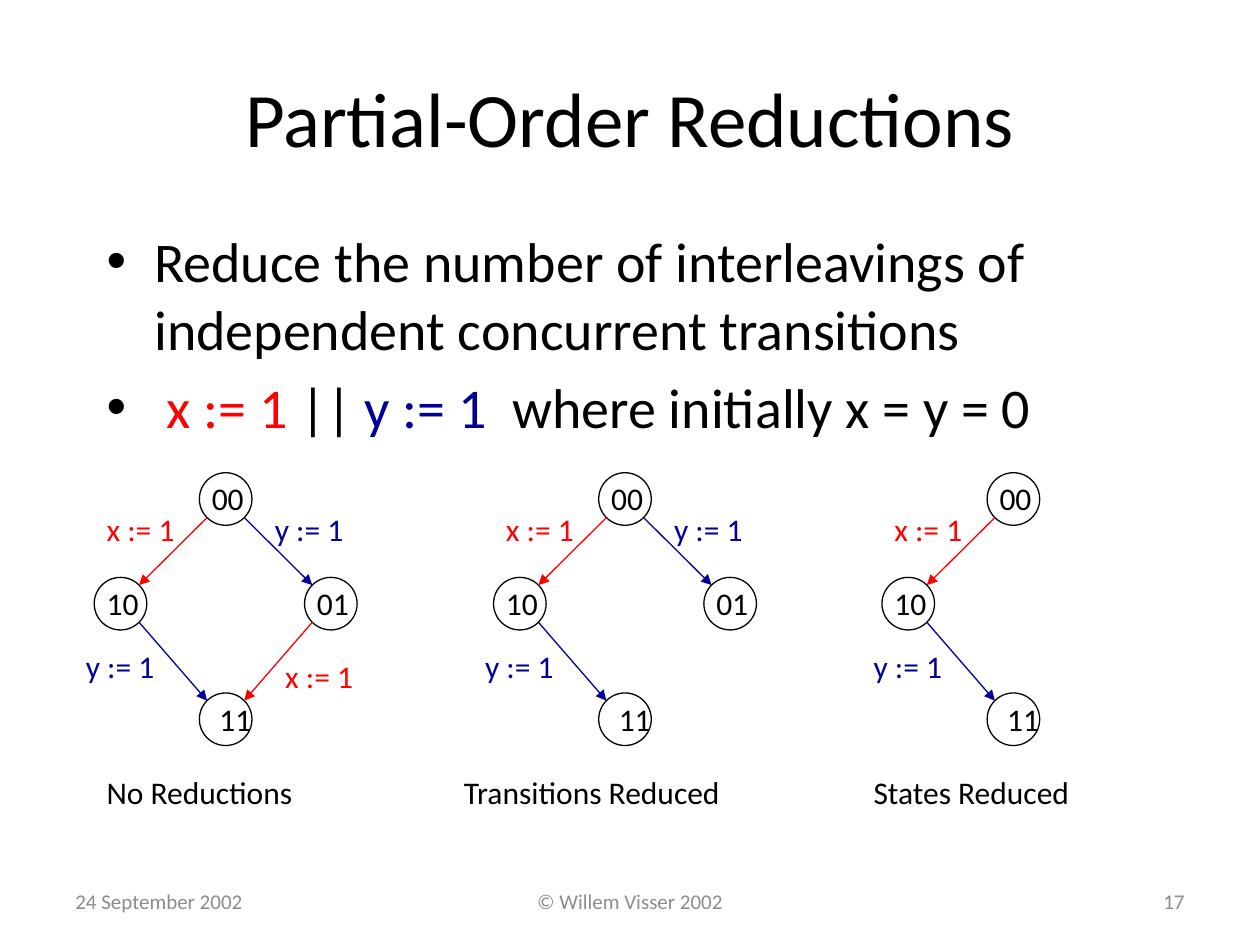
from dataclasses import dataclass
from math import copysign, sqrt

from lxml import etree
from pptx import Presentation
from pptx.dml.color import RGBColor
from pptx.enum.shapes import MSO_CONNECTOR as Connector, MSO_SHAPE as Shape
from pptx.enum.text import MSO_ANCHOR as Anchor, MSO_AUTO_SIZE as AutoSize, PP_ALIGN as Align
from pptx.oxml.ns import qn
from pptx.util import Cm, Pt

FONT = "Calibri"
BLACK, RED, BLUE, GREY = "000000", "FF0000", "000099", "8C8C8C"
DIAMETER = 1.06
LABEL_HEIGHT = 1.02
NODES = {"00": (2.12, 9.53), "10": (0, 11.64), "01": (4.24, 11.64), "11": (2.12, 13.97)}


@dataclass(frozen=True)
class Transition:
    start: str
    end: str
    text: str
    color: str
    label_x: float
    label_y: float


X_FIRST = Transition("00", "10", "x := 1", RED, 0, 10.16)
Y_FIRST = Transition("00", "01", "y := 1", BLUE, 3.39, 10.16)
Y_SECOND = Transition("10", "11", "y := 1", BLUE, -0.42, 12.91)
X_SECOND = Transition("01", "11", "x := 1", RED, 3.6, 13.12)


@dataclass(frozen=True)
class Diagram:
    left: float
    transitions: tuple[Transition, ...]
    caption: str
    caption_left: float
    caption_width: float


DIAGRAMS = (
    Diagram(1.9, (Y_FIRST, X_SECOND, X_FIRST, Y_SECOND), "No Reductions", 1.9, 5.56),
    Diagram(9.95, (Y_FIRST, X_FIRST, Y_SECOND), "Transitions Reduced", 9.1, 7.49),
    Diagram(17.78, (X_FIRST, Y_SECOND), "States Reduced", 17.36, 5.69),
)


def rgb(color: str) -> RGBColor:
    return RGBColor.from_string(color)


def style(paragraph, size: float, color: str, align=Align.LEFT) -> None:
    paragraph.alignment = align
    paragraph.font.name = FONT
    paragraph.font.size = Pt(size)
    paragraph.font.color.rgb = rgb(color)


def add_text(page, left: float, top: float, width: float, height: float, text: str,
             size: float, color: str = BLACK, align=Align.LEFT) -> None:
    box = page.shapes.add_textbox(Cm(left), Cm(top), Cm(width), Cm(height))
    frame = box.text_frame
    frame.word_wrap = True
    frame.vertical_anchor = Anchor.MIDDLE
    frame.text = text
    style(frame.paragraphs[0], size, color, align)


def add_label(page, left: float, top: float, width: float, height: float, text: str,
              color: str = BLACK) -> None:
    """Add a one-line text box that fits its text."""
    box = page.shapes.add_textbox(Cm(left), Cm(top), Cm(width), Cm(height))
    frame = box.text_frame
    frame.word_wrap = False
    frame.auto_size = AutoSize.SHAPE_TO_FIT_TEXT
    frame.text = text
    style(frame.paragraphs[0], 18, color)


def add_bullets(page) -> None:
    box = page.shapes.add_textbox(Cm(1.9), Cm(4.45), Cm(21.59), Cm(4.88))
    frame = box.text_frame
    frame.word_wrap = True
    bullets = (
        (("Reduce the number of interleavings of independent concurrent transitions", BLACK),),
        ((" ", BLACK), ("x := 1", RED), (" || ", BLACK), ("y := 1", BLUE),
         ("  where initially x = y = 0", BLACK)),
    )
    for index, spans in enumerate(bullets):
        para = frame.add_paragraph() if index else frame.paragraphs[0]
        style(para, 32, BLACK)
        para.space_before = Pt(6.4)
        properties = para._p.get_or_add_pPr()
        properties.set("marL", str(Cm(0.96)))
        properties.set("indent", str(-Cm(0.96)))
        bullet_font = etree.Element(qn("a:buFont"), typeface="Arial")
        properties.find(qn("a:spcBef")).addnext(bullet_font)
        bullet_font.addnext(etree.Element(qn("a:buChar"), char="•"))
        for text, color in spans:
            span = para.add_run()
            span.text = text
            span.font.color.rgb = rgb(color)


def add_node(page, left: float, top: float, name: str) -> None:
    circle = page.shapes.add_shape(Shape.OVAL, Cm(left), Cm(top), Cm(DIAMETER), Cm(DIAMETER))
    circle.shadow.inherit = False
    circle.fill.background()
    circle.line.color.rgb = rgb(BLACK)
    circle.line.width = Pt(0.75)
    if name == "11":
        frame = circle.text_frame
        frame.word_wrap = False
        frame.vertical_anchor = Anchor.MIDDLE
        frame.text = name
        style(frame.paragraphs[0], 18, BLACK)
    else:
        add_label(page, left, top, 1.2, LABEL_HEIGHT, name)


def add_transition(page, left: float, move: Transition) -> None:
    """Draw an arrow between the facing diagonal points of two circles, with its label."""
    (start_x, start_y), (end_x, end_y) = NODES[move.start], NODES[move.end]
    radius = DIAMETER / 2
    reach = radius / sqrt(2)
    side = copysign(reach, end_x - start_x)
    arrow = page.shapes.add_connector(
        Connector.STRAIGHT,
        Cm(left + start_x + radius + side), Cm(start_y + radius + reach),
        Cm(left + end_x + radius - side), Cm(end_y + radius - reach))
    arrow.line.color.rgb = rgb(move.color)
    arrow.line.width = Pt(0.75)
    etree.SubElement(arrow.line._get_or_add_ln(), qn("a:tailEnd"), type="triangle")
    etree.SubElement(arrow._element.spPr, qn("a:effectLst"))
    add_label(page, left + move.label_x, move.label_y, 2.01, LABEL_HEIGHT, move.text, move.color)


def add_diagram(page, diagram: Diagram) -> None:
    used = {name for move in diagram.transitions for name in (move.start, move.end)}
    for name, (x, y) in NODES.items():
        if name in used:
            add_node(page, diagram.left + x, y, name)
    for move in diagram.transitions:
        add_transition(page, diagram.left, move)
    add_label(page, diagram.caption_left, 15.45, diagram.caption_width, 1.27, diagram.caption)


def main() -> None:
    deck = Presentation()
    deck.slide_width, deck.slide_height = Cm(25.4), Cm(19.05)
    page = deck.slides.add_slide(deck.slide_layouts[6])
    add_text(page, 1.27, 17.65, 5.93, 1.02, "24 September 2002", 12, GREY)
    add_text(page, 8.68, 17.65, 8.04, 1.02, "© Willem Visser 2002", 12, GREY, Align.CENTER)
    add_text(page, 18.2, 17.65, 5.93, 1.02, "17", 12, GREY, Align.RIGHT)
    add_text(page, 1.27, 0.76, 22.86, 3.18, "Partial-Order Reductions", 44, BLACK, Align.CENTER)
    add_bullets(page)
    for diagram in DIAGRAMS:
        add_diagram(page, diagram)
    deck.save("out.pptx")


if __name__ == "__main__":
    main()
